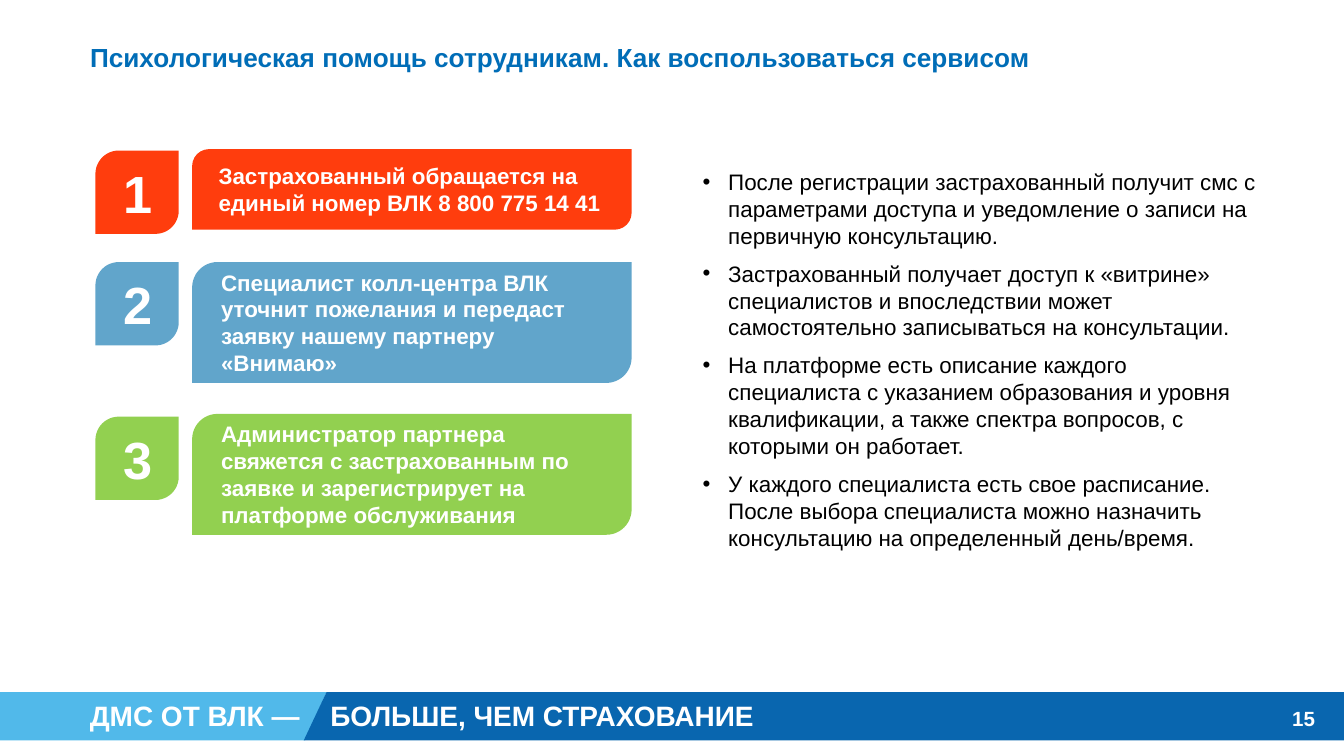
from pptx import Presentation
from pptx import util as u
from pptx.dml.color import RGBColor
from pptx.enum import shapes, text
from pptx.oxml.ns import qn
from lxml import etree

In = u.Inches
theme = {
    "font": "Arial",
    "white": "FFFFFF", "black": "000000", "title": "006DB7",
    "sky": "51B9EA", "navy": "0966AF",
    "steps": ["FF3D0D", "61A5CB", "92D050"],
    "size": {"title": 14, "foot": 15, "page": 11, "body": 12, "digit": 28},
}


def style(para, size, color, bold=True):
    look = {"name": theme["font"], "size": u.Pt(theme["size"][size]), "bold": bold}
    for key, val in look.items():
        setattr(para.font, key, val)
    para.font.color.rgb = RGBColor.from_string(theme[color])


def paint(shape, color):
    shape.shadow.inherit = False
    shape.fill.solid()
    shape.fill.fore_color.rgb = RGBColor.from_string(color)
    shape.line.fill.background()


prs = Presentation()
prs.slide_width = In(10)
prs.slide_height = In(10) * 9 // 16
slide = prs.slides.add_slide(prs.slide_layouts[5])
items = slide.shapes

# Footer band
bands = [
    ("sky", [(0, 5.15), (2.43, 5.15), (2.27, 5.51), (0, 5.51)]),
    ("navy", [(2.43, 5.15), (10.01, 5.15), (10.01, 5.51), (2.26, 5.51)]),
]
for color, pts in bands:
    ends = [(In(x), In(y)) for x, y in pts]
    form = items.build_freeform(*ends[0])
    form.add_line_segments(ends[1:], close=True)
    paint(form.convert_to_shape(), theme[color])

foot = items.add_textbox(In(0.57), In(5.15), In(6.3), In(0.35))
foot.text_frame.word_wrap = True
para = foot.text_frame.paragraphs[0]
para.text = "ДМС ОТ ВЛК —\tБОЛЬШЕ, ЧЕМ СТРАХОВАНИЕ"
tabs = etree.SubElement(para._p.get_or_add_pPr(), qn("a:tabLst"))
etree.SubElement(tabs, qn("a:tab"), pos=str(In(1.79)), algn="l")
style(para, "foot", "white")

# Title
title = items.title
place = {"left": 0.57, "top": 0.29, "width": 8.04, "height": 0.27}
for key, val in place.items():
    setattr(title, key, In(val))
frame = title.text_frame
frame.text = "Психологическая помощь сотрудникам. Как воспользоваться сервисом"
frame.vertical_anchor = text.MSO_ANCHOR.MIDDLE
frame.auto_size = text.MSO_AUTO_SIZE.NONE
frame.paragraphs[0].alignment = text.PP_ALIGN.LEFT
style(frame.paragraphs[0], "title", "title")

# Page number
page = items.add_textbox(In(9.52), In(5.25), In(0.36), In(0.19))
frame = page.text_frame
frame.text = "15"
frame.vertical_anchor = text.MSO_ANCHOR.MIDDLE
for side in ("left", "top", "right", "bottom"):
    setattr(frame, "margin_" + side, 0)
frame.paragraphs[0].alignment = text.PP_ALIGN.CENTER
style(frame.paragraphs[0], "page", "white")

# Bullets
notes = [
    "После регистрации застрахованный получит смс с параметрами доступа "
    "и уведомление о записи на первичную консультацию.",
    "Застрахованный получает доступ к «витрине» специалистов и впоследствии "
    "может самостоятельно записываться на консультации.",
    "На платформе есть описание каждого специалиста с указанием образования "
    "и уровня квалификации, а также спектра вопросов, с которыми он работает.",
    "У каждого специалиста есть свое расписание. После выбора специалиста "
    "можно назначить консультацию на определенный день/время.",
]
frame = items.add_textbox(In(5.13), In(1.2), In(4.39), In(3.45)).text_frame
frame.word_wrap = True
for i, note in enumerate(notes):
    para = frame.add_paragraph() if i else frame.paragraphs[0]
    para.text = note
    para.space_after = u.Pt(6)
    props = para._p.get_or_add_pPr()
    props.set("marL", str(In(0.19)))
    props.set("indent", str(-In(0.19)))
    etree.SubElement(props, qn("a:buFont"), typeface=theme["font"])
    etree.SubElement(props, qn("a:buChar"), char="•")
    style(para, "body", "black", bold=False)

# Numbered steps: card top, card height, badge top, wording
steps = [
    (1.11, 0.6, 1.12, "Застрахованный обращается на единый номер ВЛК 8 800 775 14 41"),
    (1.95, 0.9, 1.95, "Специалист колл-центра ВЛК уточнит пожелания и передаст "
                      "заявку нашему партнеру «Внимаю»"),
    (3.08, 0.9, 3.1, "Администратор партнера свяжется с застрахованным по заявке "
                     "и зарегистрирует на платформе обслуживания"),
]
for i, (top, high, mark, words) in enumerate(steps):
    parts = [
        (1.43, top, 3.27, high, 0.21, words, "body"),
        (0.71, mark, 0.62, 0.62, 0.28, str(i + 1), "digit"),
    ]
    for x, y, w, h, curve, label, size in parts:
        card = items.add_shape(shapes.MSO_SHAPE.ROUND_2_DIAG_RECTANGLE,
                               In(x), In(y), In(w), In(h))
        card.adjustments[0] = curve
        paint(card, theme["steps"][i])
        frame = card.text_frame
        frame.text = label
        frame.margin_left = In(0.16)
        frame.vertical_anchor = text.MSO_ANCHOR.MIDDLE
        frame.paragraphs[0].alignment = text.PP_ALIGN.LEFT
        style(frame.paragraphs[0], size, "white")

prs.save("out.pptx")
